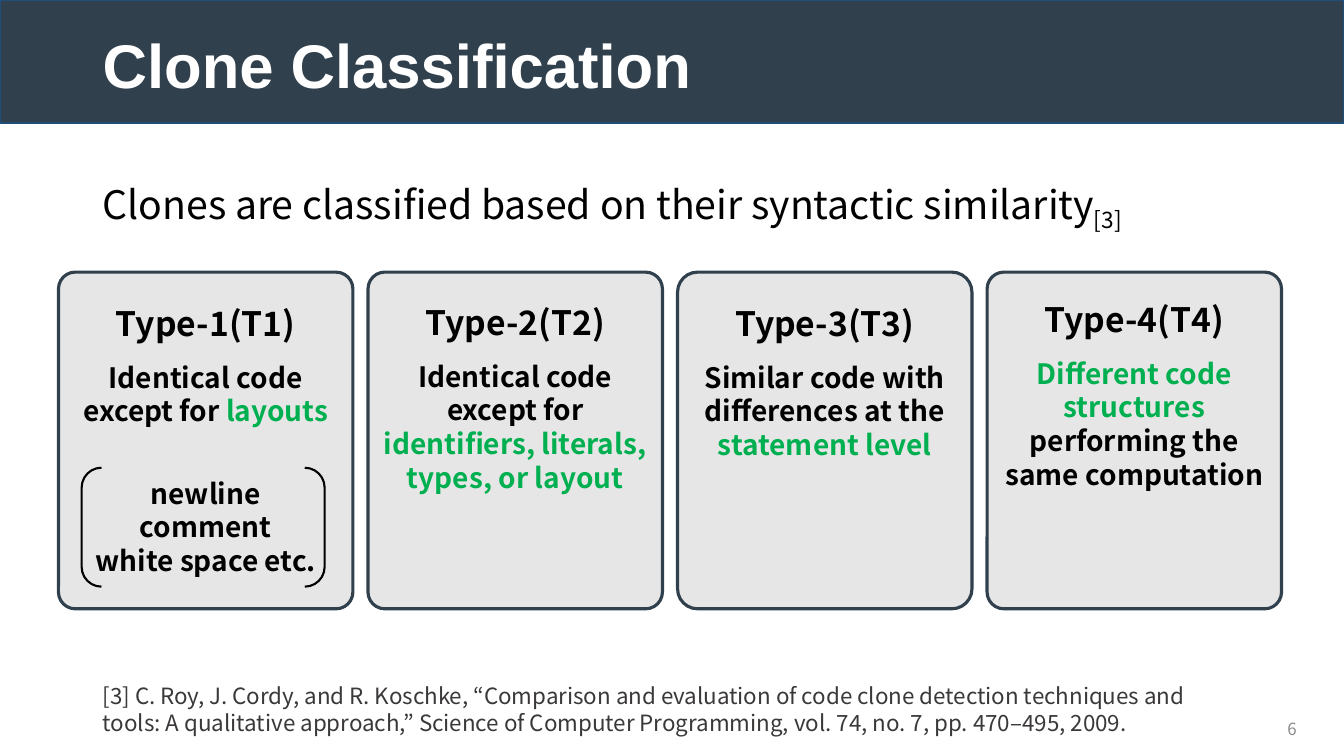
from dataclasses import dataclass

import pptx
import pptx.dml.color
import pptx.enum.shapes
import pptx.enum.text
import pptx.util

Inches = pptx.util.Inches
Pt = pptx.util.Pt
SHAPE = pptx.enum.shapes.MSO_SHAPE
ALIGN = pptx.enum.text.PP_ALIGN
ANCHOR = pptx.enum.text.MSO_ANCHOR


@dataclass(frozen=True)
class Theme:
    heading_font: str = "Arial"
    body_font: str = "Noto Sans CJK JP"
    navy: str = "31404D"
    banner_edge: str = "1F4E79"
    card: str = "E7E6E6"
    black: str = "000000"
    white: str = "FFFFFF"
    green: str = "00B050"
    citation: str = "3B3838"
    grey: str = "8C8C8C"
    title_size: int = 44
    lead_size: int = 28
    type_size: int = 24
    card_size: int = 20
    citation_size: int = 16
    number_size: int = 12


theme = Theme()
rgb = pptx.dml.color.RGBColor.from_string

deck = pptx.Presentation()
deck.slide_width = Inches(13.33)
deck.slide_height = Inches(7.5)
slide = deck.slides.add_slide(deck.slide_layouts[6])


def add_outline(kind, box, fill, edge, width):
    """Add a preset shape; a fill of None leaves it hollow."""
    shape = slide.shapes.add_shape(kind, *map(Inches, box))
    shape.shadow.inherit = False
    if fill:
        shape.fill.solid()
        shape.fill.fore_color.rgb = rgb(fill)
    else:
        shape.fill.background()
    shape.line.color.rgb = rgb(edge)
    shape.line.width = Pt(width)
    return shape


def add_run(paragraph, text, size, color, bold=False, font=theme.body_font):
    run = paragraph.add_run()
    run.text = text
    run.font.color.rgb = rgb(color)
    for key, value in {"size": Pt(size), "bold": bold, "name": font}.items():
        setattr(run.font, key, value)
    return run


add_outline(SHAPE.RECTANGLE, (0, 0, 13.33, 1.22), theme.navy, theme.banner_edge, 1)

# Single-paragraph texts: box, anchor, paragraph format, text, run format
texts = [
    ((0.92, 0.18, 11.5, 0.88), ANCHOR.BOTTOM, {"line_spacing": 0.9},
     "Clone Classification",
     (theme.title_size, theme.white, True, theme.heading_font)),
    ((0.92, 1.63, 11.64, 0.8), ANCHOR.TOP,
     {"line_spacing": 1.2, "space_before": Pt(10)},
     "Clones are classified based on their syntactic similarity",
     (theme.lead_size, theme.black)),
    ((0.92, 6.72, 11.5, 0.64), ANCHOR.TOP, {},
     "[3] C. Roy, J. Cordy, and R. Koschke, “Comparison and evaluation of code "
     "clone detection techniques and tools: A qualitative approach,” Science of "
     "Computer Programming, vol. 74, no. 7, pp. 470–495, 2009.",
     (theme.citation_size, theme.citation)),
    ((9.96, 7.03, 3, 0.4), ANCHOR.MIDDLE, {"alignment": ALIGN.RIGHT},
     "6", (theme.number_size, theme.grey)),
]
paragraphs = []
for box, anchor, layout, text, style in texts:
    frame = slide.shapes.add_textbox(*map(Inches, box)).text_frame
    frame.word_wrap = True
    frame.vertical_anchor = anchor
    for key, value in layout.items():
        setattr(frame.paragraphs[0], key, value)
    add_run(frame.paragraphs[0], text, *style)
    paragraphs.append(frame.paragraphs[0])

lead = paragraphs[1]
reference = add_run(lead, "[3]", theme.lead_size, theme.black)
reference.font._element.set("baseline", "-25000")

# Each clone type: name, top inset, corner, lines of (space before, coloured parts)
black, green = theme.black, theme.green
clone_types = [
    ("Type-1(T1)", 0.26, 0.057, [
        (12, [("Identical code", black)]),
        (0, [("except for ", black), ("layouts", green)]),
        (34.8, [("newline", black)]),
        (0, [("comment", black)]),
        (0, [("white space etc.", black)])]),
    ("Type-2(T2)", 0.25, 0.057, [
        (12, [("Identical code", black)]),
        (0, [("except for ", black),
             ("identifiers, literals, types, or layout", green)])]),
    ("Type-3(T3)", 0.25, 0.068, [
        (12, [("Similar code with differences at the ", black),
              ("statement level", green)])]),
    ("Type-4(T4)", 0.22, 0.057, [
        (12, [("Different code structures ", green),
              ("performing the same computation", black)])]),
]
card_left, card_pitch = 0.58, 3.07
for column, (name, inset, corner, lines) in enumerate(clone_types):
    card = add_outline(SHAPE.ROUNDED_RECTANGLE,
                       (card_left + column * card_pitch, 2.7, 2.92, 3.34),
                       theme.card, theme.navy, 2.25)
    card.adjustments[0] = corner
    frame = card.text_frame
    frame.word_wrap = True
    frame.vertical_anchor = ANCHOR.TOP
    frame.margin_top = Inches(inset)
    heading = frame.paragraphs[0]
    heading.alignment = ALIGN.CENTER
    add_run(heading, name, theme.type_size, black, True)
    for gap, parts in lines:
        line = frame.add_paragraph()
        line.alignment = ALIGN.CENTER
        line.space_before = Pt(gap)
        for text, color in parts:
            add_run(line, text, theme.card_size, color, True)

add_outline(SHAPE.DOUBLE_BRACKET, (0.81, 4.64, 2.41, 1.18), None, black, 1.5)

deck.save("out.pptx")
